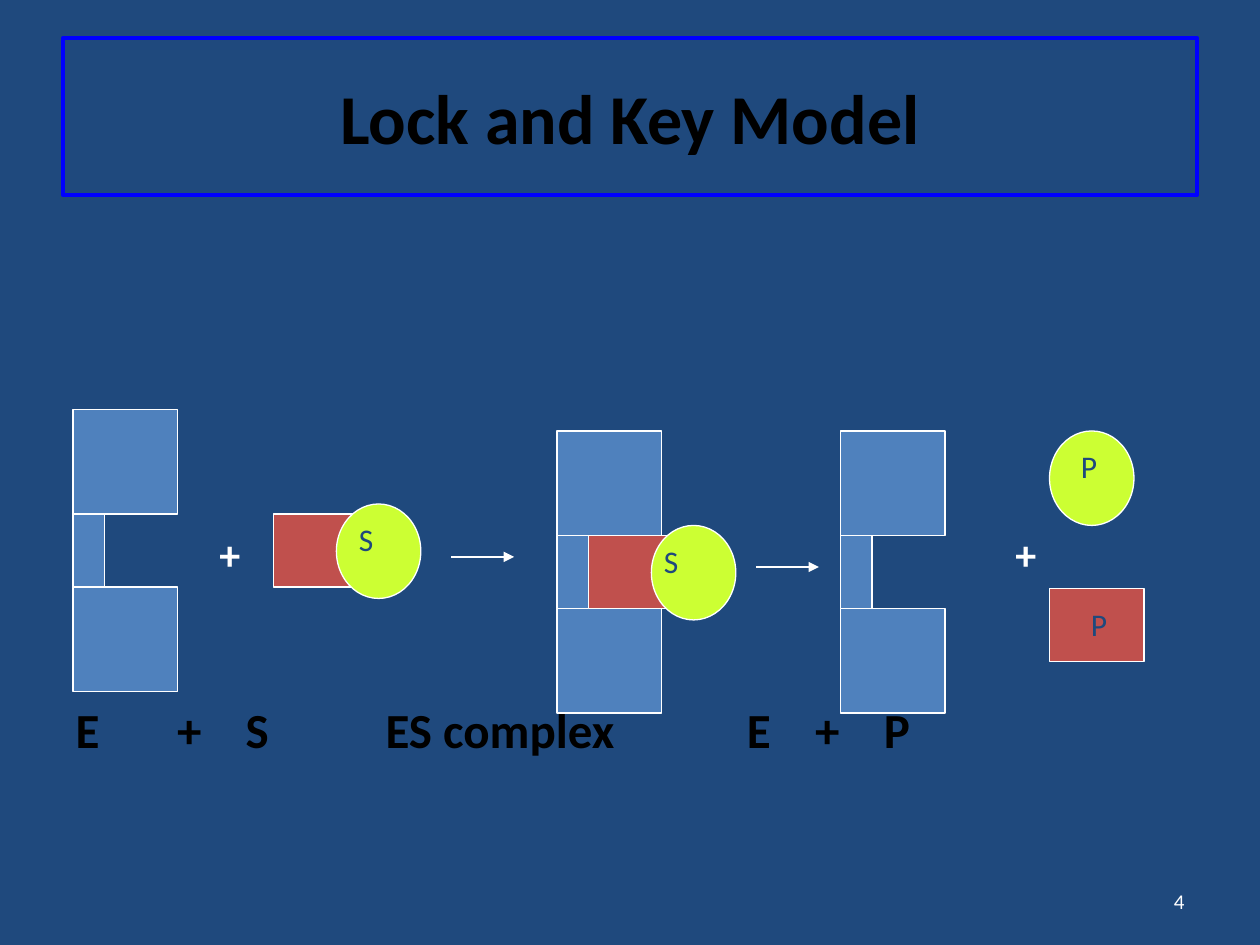
"""Build the Lock and Key Model slide showing enzyme, substrate and products."""
from dataclasses import dataclass

from pptx import Presentation
from pptx.dml.color import RGBColor
from pptx.enum.shapes import MSO_CONNECTOR as Connector, MSO_SHAPE as Shape
from pptx.enum.text import MSO_ANCHOR as Anchor, MSO_AUTO_SIZE as AutoSize, PP_ALIGN as Align
from pptx.oxml.ns import qn
from pptx.util import Inches, Pt
from lxml.etree import SubElement


@dataclass(frozen=True)
class Theme:
    font: str = "Calibri"
    navy: str = "1F497D"
    white: str = "FFFFFF"
    black: str = "000000"
    frame: str = "0000FF"
    enzyme: str = "4F81BD"
    block: str = "C0504D"
    disc: str = "CCFF33"
    title_size: int = 40
    equation_size: int = 28
    plus_size: int = 24
    label_size: int = 18
    number_size: int = 12
    outline: float = 0.75
    frame_line: float = 2.25


THEME = Theme()
BLOCK_SIDE = 0.83
SLOT_HEIGHT = 0.58


def color(value):
    return RGBColor.from_string(value)


def place(shape, left, top, width, height):
    shape.left, shape.top = Inches(left), Inches(top)
    shape.width, shape.height = Inches(width), Inches(height)


def format_runs(paragraph, size, tint, bold=False):
    for run in paragraph.runs:
        run.font.name = THEME.font
        run.font.size = Pt(size)
        run.font.bold = bold
        run.font.color.rgb = color(tint)


def add_title(slide, text):
    title = slide.shapes.title
    place(title, 0.5, 0.3, 9, 1.25)
    title.line.color.rgb = color(THEME.frame)
    title.line.width = Pt(THEME.frame_line)
    frame = title.text_frame
    frame.text = text
    frame.vertical_anchor = Anchor.MIDDLE
    paragraph = frame.paragraphs[0]
    paragraph.alignment = Align.CENTER
    format_runs(paragraph, THEME.title_size, THEME.black, True)


def write_terms(paragraph, terms, gaps, size, tint, indent, space_before):
    paragraph.line_spacing = 0.9
    paragraph.space_before = Pt(space_before)
    properties = paragraph._p.get_or_add_pPr()
    properties.set("marL", str(Inches(indent)))
    properties.set("indent", "0")
    SubElement(properties, qn("a:buNone"))
    paragraph.add_run().text = terms[0]
    for term, gap in zip(terms[1:], gaps):
        space = paragraph.add_run()
        space.text = " "
        space._r.get_or_add_rPr().set("spc", str(round(gap * 100)))
        paragraph.add_run().text = term
    format_runs(paragraph, size, tint, True)


def add_equation(slide):
    body = slide.placeholders[1]
    place(body, 0.33, 2.17, 8.83, 4.5)
    frame = body.text_frame
    frame.auto_size = AutoSize.NONE
    frame.vertical_anchor = Anchor.TOP
    frame.margin_left, frame.margin_top = Inches(0.27), Inches(2.07)
    write_terms(frame.paragraphs[0], ["+", "+"], [437.5],
                THEME.plus_size, THEME.white, 1.14, 0)
    write_terms(frame.add_paragraph(), ["E", "+", "S", "ES complex", "E", "+", "P"],
                [38, 19, 60.4, 69.6, 19, 19],
                THEME.equation_size, THEME.black, 0, 72.5)


def add_piece(slide, kind, left, top, width, height, fill):
    piece = slide.shapes.add_shape(
        kind, Inches(left), Inches(top), Inches(width), Inches(height))
    piece.shadow.inherit = False
    piece.fill.solid()
    piece.fill.fore_color.rgb = color(fill)
    piece.line.color.rgb = color(THEME.white)
    piece.line.width = Pt(THEME.outline)


def add_enzyme(slide, left, top):
    slot_top = top + BLOCK_SIDE
    for block_top in (slot_top + SLOT_HEIGHT, top):
        add_piece(slide, Shape.RECTANGLE, left, block_top, BLOCK_SIDE, BLOCK_SIDE, THEME.enzyme)
    add_piece(slide, Shape.RECTANGLE, left, slot_top, 0.25, SLOT_HEIGHT, THEME.enzyme)


def add_block(slide, left, top):
    add_piece(slide, Shape.RECTANGLE, left, top, 0.75, SLOT_HEIGHT, THEME.block)


def add_disc(slide, left, top):
    add_piece(slide, Shape.OVAL, left, top, 0.67, 0.75, THEME.disc)


def add_text(slide, text, left, top, width, height, size, tint, align=Align.LEFT):
    box = slide.shapes.add_textbox(Inches(left), Inches(top), Inches(width), Inches(height))
    frame = box.text_frame
    frame.word_wrap = True
    frame.text = text
    paragraph = frame.paragraphs[0]
    paragraph.alignment = align
    format_runs(paragraph, size, tint)
    return frame


def add_label(slide, text, left, top):
    add_text(slide, text, left, top, 0.42, 0.5, THEME.label_size, THEME.navy)


def add_substrate(slide, left, top, label_left):
    add_block(slide, left, top)
    add_disc(slide, left + 0.5, top - 0.08)
    add_label(slide, "S", label_left, top)


def add_arrow(slide, left, top):
    arrow = slide.shapes.add_connector(
        Connector.STRAIGHT, Inches(left), Inches(top), Inches(left + 0.5), Inches(top))
    arrow.line.color.rgb = color(THEME.white)
    arrow.line.width = Pt(THEME.outline)
    SubElement(arrow.line._get_or_add_ln(), qn("a:tailEnd"), type="triangle")
    SubElement(arrow._element.spPr, qn("a:effectLst"))


def add_products(slide):
    add_block(slide, 8.33, 4.67)
    add_disc(slide, 8.33, 3.42)
    add_label(slide, "P", 8.48, 3.5)
    add_label(slide, "P", 8.56, 4.75)


def add_slide_number(slide, text):
    frame = add_text(slide, text, 7.17, 6.95, 2.33, 0.4,
                     THEME.number_size, THEME.white, Align.RIGHT)
    frame.vertical_anchor = Anchor.MIDDLE


def main():
    presentation = Presentation()
    presentation.slide_width, presentation.slide_height = Inches(10), Inches(7.5)
    slide = presentation.slides.add_slide(presentation.slide_layouts[1])
    slide.background.fill.solid()
    slide.background.fill.fore_color.rgb = color(THEME.navy)

    add_title(slide, "Lock and Key Model")
    add_equation(slide)
    for left, top in [(0.58, 3.25), (4.42, 3.42), (6.67, 3.42)]:
        add_enzyme(slide, left, top)
    for left, top, label_left in [(2.17, 4.08, 2.75), (4.67, 4.25, 5.17)]:
        add_substrate(slide, left, top, label_left)
    for left, top in [(3.58, 4.42), (6, 4.5)]:
        add_arrow(slide, left, top)
    add_products(slide)
    add_slide_number(slide, "4")
    presentation.save("out.pptx")


if __name__ == "__main__":
    main()
